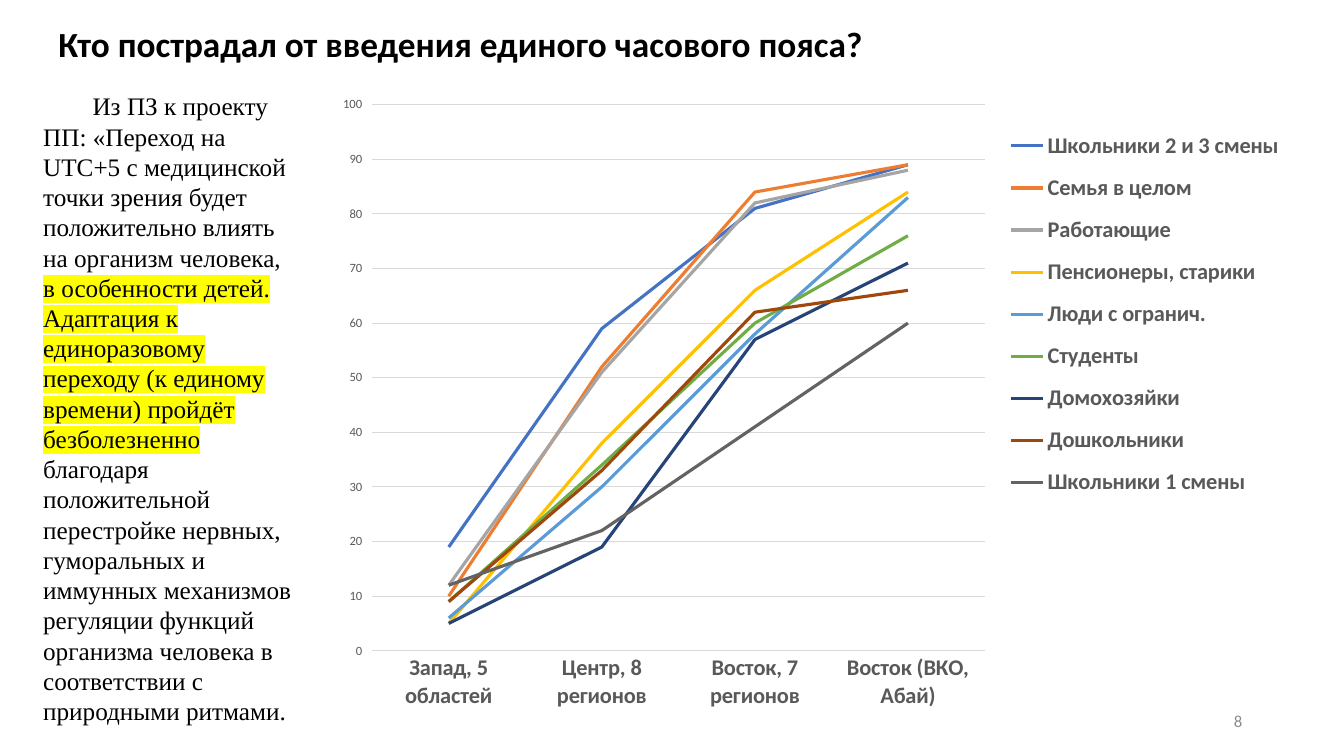
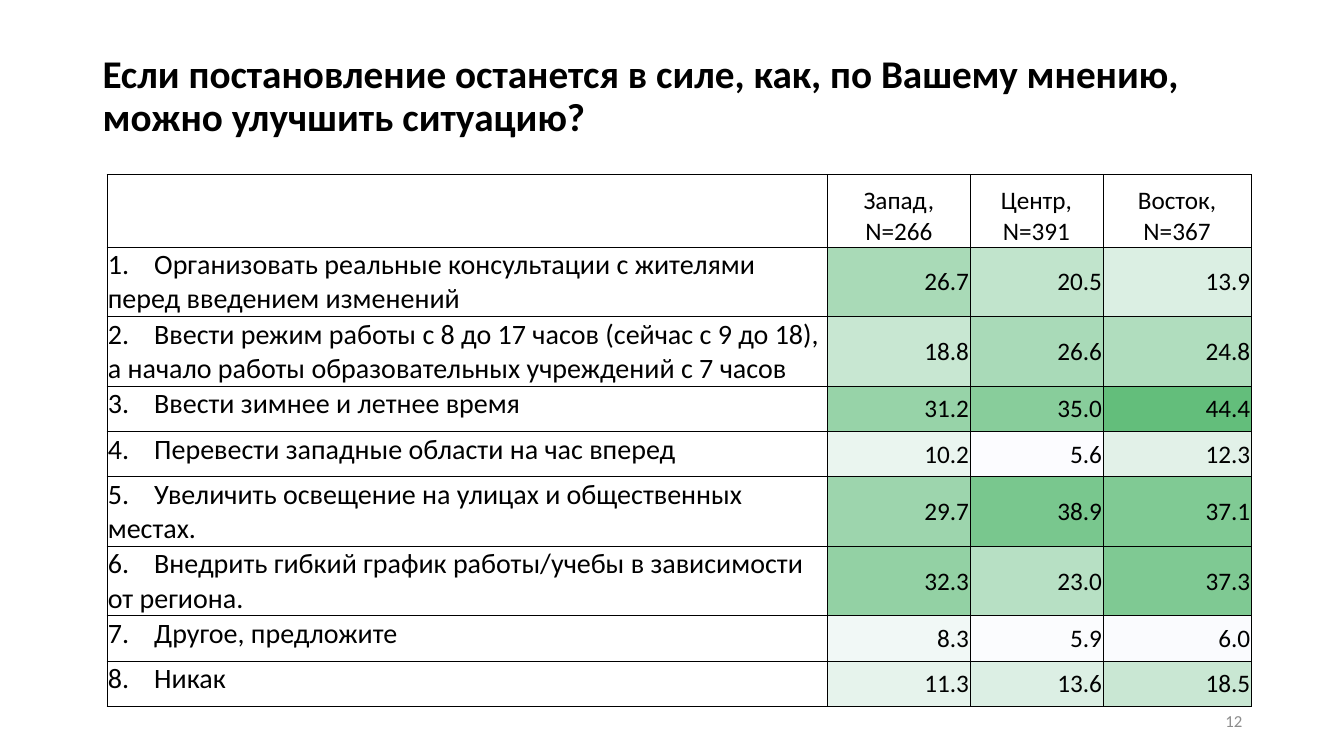
from lxml import etree
from pptx import Presentation
from pptx import util as u
from pptx.chart.data import CategoryChartData
from pptx.dml.color import RGBColor
from pptx.enum import chart as ch, text
from pptx.oxml import parse_xml
from pptx.oxml.ns import nsdecls, qn

C = {
    "ink": "000000", "number": "8C8C8C", "label": "595959", "grid": "D9D9D9",
    "mark": "FFFF00", "scale_low": "FCFCFF", "scale_high": "63BE7B",
}
SANS, SERIF = "Calibri", "Times New Roman"


def set_font(font, size, color="ink", bold=False, name=SANS):
    font.size, font.bold, font.name = u.Pt(size), bold, name
    font.color.rgb = RGBColor.from_string(C[color])


def add_text(slide, words, at, anchor=text.MSO_ANCHOR.MIDDLE, align=text.PP_ALIGN.LEFT):
    sp = slide.shapes.add_textbox(*map(u.Inches, at))
    tf = sp.text_frame
    tf.word_wrap = True
    tf.vertical_anchor = anchor
    p = tf.paragraphs[0]
    p.alignment = align
    for part in words:
        p.add_run().text = part
    return p


prs = Presentation()
prs.slide_width, prs.slide_height = u.Inches(13.33), u.Inches(7.5)

pages = [
    ("Кто пострадал от введения единого часового пояса?", (0.48, 0.26, 11.5, 0.4), 25.2, "8"),
    ("Если постановление останется в силе, как, по Вашему мнению, можно улучшить ситуацию?",
     (0.92, 0.4, 11.5, 1.13), 28, "12"),
]
slides = []
for title, at, size, number in pages:
    s = prs.slides.add_slide(prs.slide_layouts[6])
    p = add_text(s, [title], at)
    p.line_spacing = 0.9
    set_font(p.font, size, bold=True)
    p = add_text(s, [number], (9.42, 6.95, 3, 0.4), align=text.PP_ALIGN.RIGHT)
    set_font(p.font, 12, "number")
    slides.append(s)
chart_slide, table_slide = slides

series = [
    ("Школьники 2 и 3 смены", "4472C4", (19, 59, 81, 89)),
    ("Семья в целом", "ED7D31", (10, 52, 84, 89)),
    ("Работающие", "A5A5A5", (12, 51, 82, 88)),
    ("Пенсионеры, старики", "FFC000", (5, 38, 66, 84)),
    ("Люди с огранич.", "5B9BD5", (6, 30, 58, 83)),
    ("Студенты", "70AD47", (9, 34, 60, 76)),
    ("Домохозяйки", "264478", (5, 19, 57, 71)),
    ("Дошкольники", "9E480E", (9, 33, 62, 66)),
    ("Школьники 1 смены", "636363", (12, 22, 41, 60)),
]
data = CategoryChartData(number_format="0")
data.categories = ["Запад, 5 областей", "Центр, 8 регионов", "Восток, 7 регионов", "Восток (ВКО, Абай)"]
for name, color, values in series:
    data.add_series(name, values)
chart = chart_slide.shapes.add_chart(
    ch.XL_CHART_TYPE.LINE, *map(u.Inches, (3.21, 0.85, 9.64, 6.3)), data).chart
set_font(chart.font, 10)
chart.has_title = False
chart.plots[0].vary_by_categories = False
for line, (name, color, values) in zip(chart.plots[0].series, series):
    line.smooth = False
    line.format.line.width = u.Pt(2.25)
    line.format.line.color.rgb = RGBColor.from_string(color)

cat_axis, val_axis = chart.category_axis, chart.value_axis
cat_axis.major_tick_mark = ch.XL_TICK_MARK.NONE
set_font(cat_axis.tick_labels.font, 16, "label", True)
val_axis.minimum_scale, val_axis.maximum_scale, val_axis.major_unit = 0, 100, 10
val_axis.tick_labels.number_format = "0"
val_axis.tick_labels.number_format_is_linked = False
set_font(val_axis.tick_labels.font, 9, "label")
val_axis.format.line.fill.background()
for rule in (cat_axis.format.line, val_axis.major_gridlines.format.line):
    rule.width = u.Pt(0.75)
    rule.color.rgb = RGBColor.from_string(C["grid"])

chart.has_legend = True
legend = chart.legend
legend.position = ch.XL_LEGEND_POSITION.RIGHT
legend.include_in_layout = False
set_font(legend.font, 16, "label", True)

plot_area = chart.plots[0]._element.getparent()
for area, inner, box in (
    (plot_area, True, (0.05, 0.03, 0.63, 0.86)),
    (legend._element, False, (0.7, 0.05, 0.29, 0.62)),
):
    for old in area.findall(qn("c:layout")):
        area.remove(old)
    layout = parse_xml(f"<c:layout {nsdecls('c')}><c:manualLayout/></c:layout>")
    settings = [("layoutTarget", "inner")] if inner else []
    settings += [("xMode", "edge"), ("yMode", "edge"), *zip("xywh", box)]
    for tag, value in settings:
        etree.SubElement(layout[0], qn(f"c:{tag}"), val=str(value))
    if inner:
        area.insert(0, layout)
    else:
        area.find(qn("c:legendPos")).addnext(layout)

quote = [
    "Из ПЗ к проекту ПП: «Переход на UTC+5 с медицинской точки зрения будет "
    "положительно влиять на организм человека, ",
    "в особенности детей. Адаптация к единоразовому переходу (к единому времени) "
    "пройдёт безболезненно ",
    "благодаря положительной перестройке нервных, гуморальных и иммунных механизмов "
    "регуляции функций организма человека в соответствии с природными ритмами.",
]
p = add_text(chart_slide, quote, (0.33, 0.85, 2.73, 6.46), text.MSO_ANCHOR.TOP)
set_font(p.font, 18, name=SERIF)
pPr = p._p.get_or_add_pPr()
pPr.set("marL", "0")
pPr.set("indent", str(u.Inches(0.49)))
p.runs[1]._r.get_or_add_rPr().append(parse_xml(
    f'<a:highlight {nsdecls("a")}><a:srgbClr val="{C["mark"]}"/></a:highlight>'))

heads = ["", "Запад, N=266", "Центр, N=391", "Восток, N=367"]
answers = [
    ("Организовать реальные консультации с жителями перед введением изменений", 26.7, 20.5, 13.9),
    ("Ввести режим работы с 8 до 17 часов (сейчас с 9 до 18), "
     "а начало работы образовательных учреждений с 7 часов", 18.8, 26.6, 24.8),
    ("Ввести зимнее и летнее время", 31.2, 35.0, 44.4),
    ("Перевести западные области на час вперед", 10.2, 5.6, 12.3),
    ("Увеличить освещение на улицах и общественных местах.", 29.7, 38.9, 37.1),
    ("Внедрить гибкий график работы/учебы в зависимости от региона.", 32.3, 23.0, 37.3),
    ("Другое, предложите", 8.3, 5.9, 6.0),
    ("Никак", 11.3, 13.6, 18.5),
]
shares = [v for answer in answers for v in answer[1:]]
low, high = min(shares), max(shares)
low_rgb, high_rgb = (RGBColor.from_string(C[k]) for k in ("scale_low", "scale_high"))

widths = [7.15, 1.41, 1.32, 1.47]
heights = [0.72, 0.69, 0.69, 0.45, 0.45, 0.69, 0.69, 0.45, 0.45]
table = table_slide.shapes.add_table(
    len(heights), len(widths), *map(u.Inches, (1.06, 1.73, sum(widths), sum(heights)))).table
table.first_row = table.horz_banding = False
for column, width in zip(table.columns, widths):
    column.width = u.Inches(width)
for row, height in zip(table.rows, heights):
    row.height = u.Inches(height)

for i, values in enumerate([heads, *answers]):
    for j, value in enumerate(values):
        cell = table.cell(i, j)
        cell.margin_left = cell.margin_right = cell.margin_top = u.Inches(0.01)
        cell.margin_bottom = 0
        tcPr = cell._tc.get_or_add_tcPr()
        for side in "LRTB":
            tcPr.append(parse_xml(
                f'<a:ln{side} {nsdecls("a")} w="{u.Pt(0.5)}"><a:solidFill>'
                f'<a:srgbClr val="{C["ink"]}"/></a:solidFill></a:ln{side}>'))
        cell.fill.background()
        if value == "":
            continue
        p = cell.text_frame.paragraphs[0]
        size = 18
        if i == 0:
            p.text, p.alignment = value, text.PP_ALIGN.CENTER
            cell.vertical_anchor = text.MSO_ANCHOR.BOTTOM
        elif j == 0:
            p.text, size = f"{i}.\t{value}", 20
            p._p.get_or_add_pPr().append(parse_xml(
                f'<a:tabLst {nsdecls("a")}><a:tab pos="{u.Inches(0.46)}" algn="l"/></a:tabLst>'))
        else:
            p.text, p.alignment = f"{value:.1f}", text.PP_ALIGN.RIGHT
            cell.vertical_anchor = text.MSO_ANCHOR.MIDDLE
            t = (value - low) / (high - low)
            cell.fill.solid()
            cell.fill.fore_color.rgb = RGBColor(
                *(round(a + (b - a) * t) for a, b in zip(low_rgb, high_rgb)))
        set_font(p.font, size)

prs.save("out.pptx")
